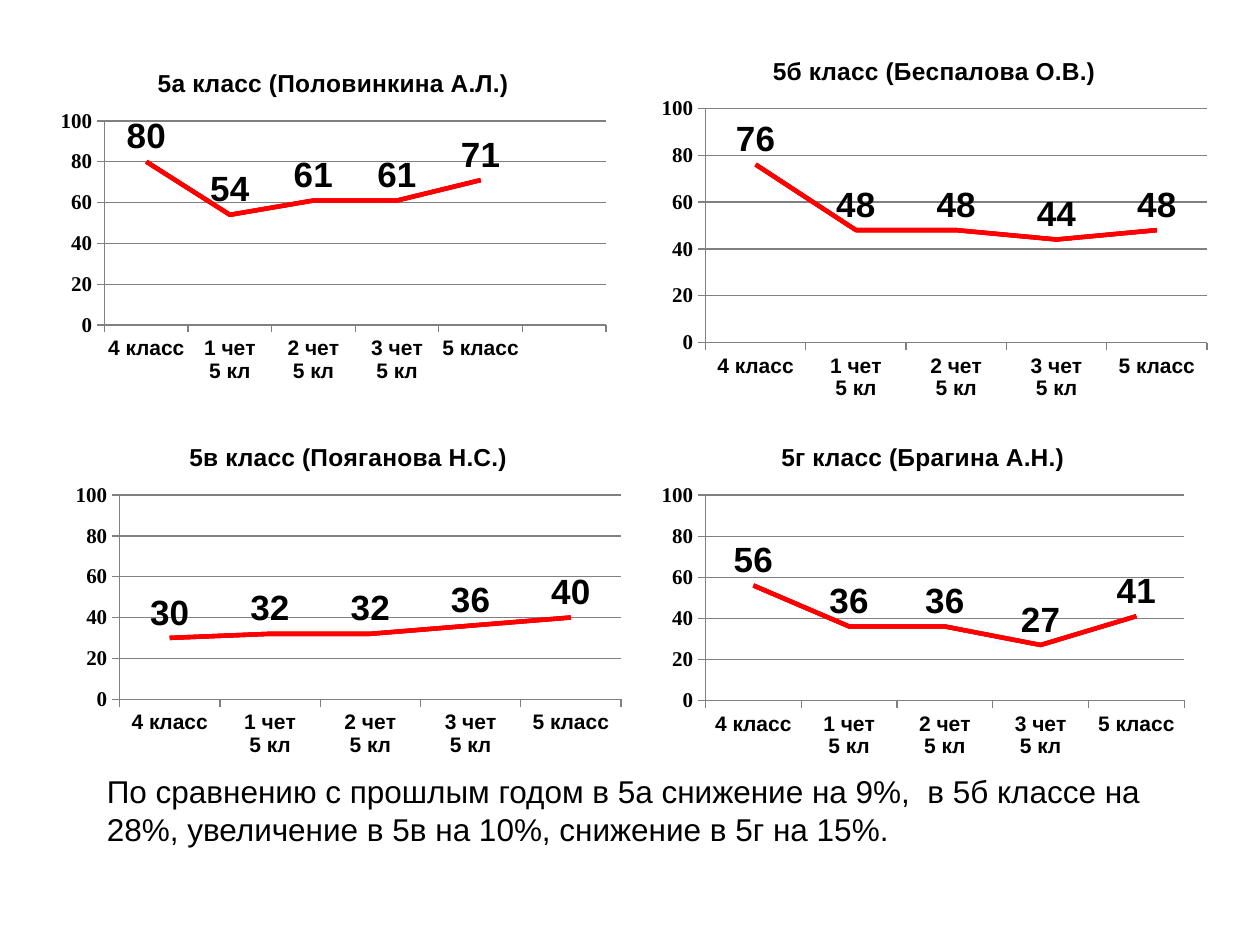
from dataclasses import dataclass

from lxml import etree
from pptx import Presentation
from pptx.chart.chart import Chart
from pptx.chart.data import CategoryChartData
from pptx.dml.color import RGBColor
from pptx.enum import chart as kinds
from pptx.oxml import parse_xml
from pptx.oxml.ns import nsdecls, qn
from pptx.util import Inches, Pt


@dataclass(frozen=True)
class Theme:
    ink: RGBColor = RGBColor(0, 0, 0)
    line: RGBColor = RGBColor(255, 0, 0)
    grid: RGBColor = RGBColor(128, 128, 128)
    sans: str = "Arial"
    serif: str = "Times New Roman"
    body: int = 18
    title: int = 14
    axis: int = 12
    label: int = 20
    stroke: float = 2.5


@dataclass(frozen=True)
class Panel:
    title: str
    left: float
    top: float
    width: float
    height: float
    marks: tuple


@dataclass(frozen=True)
class Margin:
    """Space in inches between the chart frame and its plot."""
    left: float = 0.44
    top: float = 0.57
    right: float = 0.09
    bottom: float = 0.5


THEME = Theme()
MARGIN = Margin()
TERMS = ("4 класс", *(f"{n} чет\n5 кл" for n in (1, 2, 3)), "5 класс")
PANELS = (
    Panel("5а класс (Половинкина А.Л.)", 0.39, 0.39, 4.51, 2.69,
          (80, 54, 61, 61, 71, None)),
    Panel("5б класс (Беспалова О.В.)", 5.16, 0.29, 4.51, 2.93,
          (76, 48, 48, 44, 48)),
    Panel("5в класс (Пояганова Н.С.)", 0.51, 3.36, 4.51, 2.69,
          (30, 32, 32, 36, 40)),
    Panel("5г класс (Брагина А.Н.)", 5.16, 3.36, 4.33, 2.7,
          (56, 36, 36, 27, 41)),
)
NOTE = ("По сравнению с прошлым годом в 5а снижение на 9%,  в 5б классе на "
        "28%, увеличение в 5в на 10%, снижение в 5г на 15%.")


def style(font, size: int, bold: bool = True, name: str = THEME.sans) -> None:
    font.size, font.bold, font.name = Pt(size), bold, name
    font.color.rgb = THEME.ink


def place(chart: Chart, panel: Panel) -> None:
    """Fix the inner plot area by the common margins."""
    area = chart.element.find(".//" + qn("c:plotArea"))
    for old in area.findall(qn("c:layout")):
        area.remove(old)
    layout = parse_xml(f"<c:layout {nsdecls('c')}><c:manualLayout/></c:layout>")
    parts = {
        "layoutTarget": "inner", "xMode": "edge", "yMode": "edge",
        "x": MARGIN.left / panel.width,
        "y": MARGIN.top / panel.height,
        "w": 1 - (MARGIN.left + MARGIN.right) / panel.width,
        "h": 1 - (MARGIN.top + MARGIN.bottom) / panel.height,
    }
    for tag, val in parts.items():
        etree.SubElement(layout[0], qn(f"c:{tag}")).set("val", str(val))
    area.insert(0, layout)


def dress(chart: Chart) -> None:
    """Style both axes and the gridlines."""
    for axis, face in ((chart.category_axis, THEME.sans),
                       (chart.value_axis, THEME.serif)):
        style(axis.tick_labels.font, THEME.axis, name=face)
        axis.major_tick_mark = kinds.XL_TICK_MARK.OUTSIDE
        axis.format.line.color.rgb = THEME.grid
        axis.format.line.width = Pt(0.75)
    scale = chart.value_axis
    scale.minimum_scale, scale.maximum_scale, scale.major_unit = 0, 100, 20
    scale.has_major_gridlines = True
    grid = scale.major_gridlines.format.line
    grid.color.rgb, grid.width = THEME.grid, Pt(0.75)


def draw(slide, panel: Panel) -> None:
    data = CategoryChartData()
    data.categories = TERMS + ("",) * (len(panel.marks) - len(TERMS))
    for n in (1, 2, 3):
        data.add_series(f"Series {n}", panel.marks)
    chart = slide.shapes.add_chart(
        kinds.XL_CHART_TYPE.LINE, Inches(panel.left), Inches(panel.top),
        Inches(panel.width), Inches(panel.height), data).chart
    style(chart.font, THEME.body, bold=False)
    chart.has_legend = False
    chart.has_title = True
    head = chart.chart_title.text_frame
    head.text = panel.title
    style(head.paragraphs[0].font, THEME.title)
    chart.chart_title.include_in_layout = False
    dress(chart)
    place(chart, panel)

    plot = chart.plots[0]
    plot.vary_by_categories = False
    for series in plot.series:
        series.smooth = False
        series.marker.style = kinds.XL_MARKER_STYLE.NONE
        series.format.line.color.rgb = THEME.line
        series.format.line.width = Pt(THEME.stroke)
    labels = plot.series[0].data_labels
    labels.show_value = True
    labels.position = kinds.XL_LABEL_POSITION.ABOVE
    style(labels.font, THEME.label)


def write(slide) -> None:
    box = slide.shapes.add_textbox(
        Inches(0.75), Inches(6.08), Inches(8.67), Inches(0.71))
    frame = box.text_frame
    frame.word_wrap = True
    frame.text = NOTE
    style(frame.paragraphs[0].font, THEME.body, bold=False)


def main() -> None:
    deck = Presentation()
    deck.slide_width, deck.slide_height = Inches(10), Inches(7.5)
    slide = deck.slides.add_slide(deck.slide_layouts[6])
    write(slide)
    for panel in PANELS:
        draw(slide, panel)
    deck.save("out.pptx")


if __name__ == "__main__":
    main()
